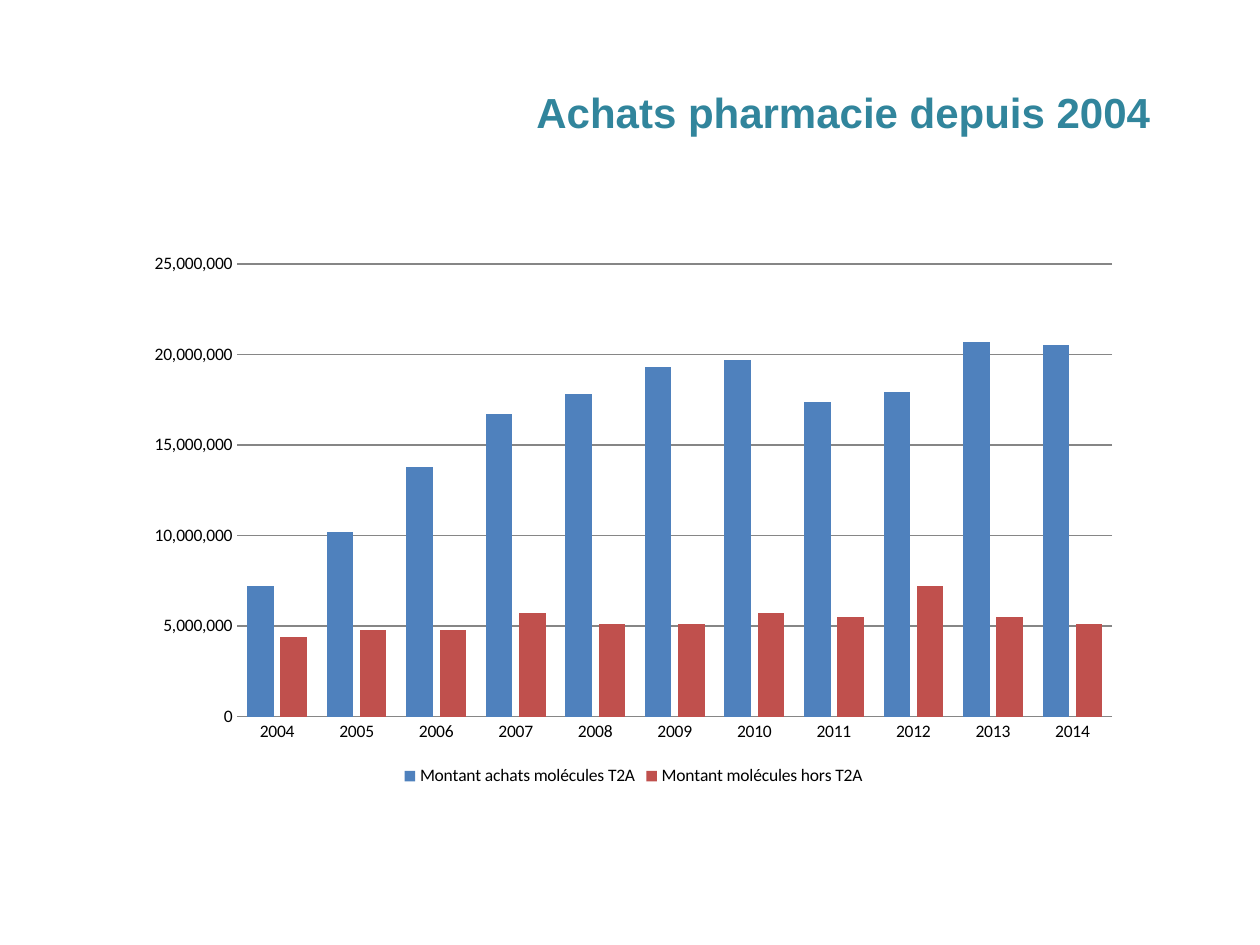
from pptx import Presentation
from pptx import util as u
from pptx.chart.data import CategoryChartData
from pptx.dml.color import RGBColor
from pptx.enum import chart as ch, text

TEAL = RGBColor(0x31, 0x85, 0x9C)
BLUE = RGBColor(0x4F, 0x81, 0xBD)
RED = RGBColor(0xC0, 0x50, 0x4D)
GREY = RGBColor(0x86, 0x86, 0x86)
BLACK = RGBColor(0, 0, 0)

YEARS = [str(year) for year in range(2004, 2015)]
# Purchases in millions
PURCHASES = [
    ("Montant achats molécules T2A", BLUE,
     [7.2, 10.2, 13.8, 16.7, 17.8, 19.3, 19.7, 17.4, 17.9, 20.7, 20.5]),
    ("Montant molécules hors T2A", RED,
     [4.4, 4.8, 4.8, 5.7, 5.1, 5.1, 5.7, 5.5, 7.2, 5.5, 5.1]),
]


class SlideBuilder:
    title_font = "Arial"
    chart_font = "Calibri"

    def __init__(self, slide):
        self.slide = slide

    def title(self, wording, left, top, width, height):
        title = self.slide.shapes.title
        title.left, title.top = u.Pt(left), u.Pt(top)
        title.width, title.height = u.Pt(width), u.Pt(height)
        frame = title.text_frame
        frame.text = wording
        frame.word_wrap = True
        frame.auto_size = text.MSO_AUTO_SIZE.NONE
        frame.vertical_anchor = text.MSO_ANCHOR.TOP
        frame.margin_left, frame.margin_right = u.Pt(14.4), u.Pt(7.2)
        frame.margin_top = frame.margin_bottom = u.Pt(3.6)
        paragraph = frame.paragraphs[0]
        paragraph.alignment = text.PP_ALIGN.RIGHT
        font = paragraph.runs[0].font
        font.name, font.size, font.bold = self.title_font, u.Pt(24), True
        font.color.rgb = TEAL

    def column_chart(self, categories, series, left, top, width, height):
        data = CategoryChartData(number_format="#,##0")
        data.categories = categories
        for name, _, millions in series:
            data.add_series(name, [round(m * 1_000_000) for m in millions])
        chart = self.slide.shapes.add_chart(
            ch.XL_CHART_TYPE.COLUMN_CLUSTERED,
            u.Pt(left), u.Pt(top), u.Pt(width), u.Pt(height), data).chart
        chart.has_title = False
        chart.font.name, chart.font.size = self.chart_font, u.Pt(10)
        chart.font.color.rgb = BLACK

        chart.has_legend = True
        chart.legend.position = ch.XL_LEGEND_POSITION.BOTTOM
        chart.legend.include_in_layout = False

        plot = chart.plots[0]
        plot.gap_width, plot.overlap = 75, -25
        plot.vary_by_categories = False
        for columns, (_, color, _) in zip(plot.series, series):
            columns.format.fill.solid()
            columns.format.fill.fore_color.rgb = color
            columns.invert_if_negative = False

        years, amounts = chart.category_axis, chart.value_axis
        for axis in (years, amounts):
            axis.major_tick_mark = axis.minor_tick_mark = ch.XL_TICK_MARK.NONE
        amounts.minimum_scale, amounts.maximum_scale = 0, 25_000_000
        amounts.major_unit = 5_000_000
        amounts.tick_labels.number_format = "#,##0"
        amounts.tick_labels.number_format_is_linked = False
        amounts.format.line.fill.background()
        amounts.has_major_gridlines = True
        for line in (years.format.line, amounts.major_gridlines.format.line):
            line.color.rgb = GREY
            line.width = u.Pt(0.75)


def main():
    deck = Presentation()
    deck.slide_width, deck.slide_height = u.Pt(720), u.Pt(540)
    builder = SlideBuilder(deck.slides.add_slide(deck.slide_layouts[5]))
    builder.title("Achats pharmacie depuis 2004", 28, 46, 636.5, 90)
    builder.column_chart(YEARS, PURCHASES, 77, 139, 570, 313)
    deck.save("out.pptx")


if __name__ == "__main__":
    main()
